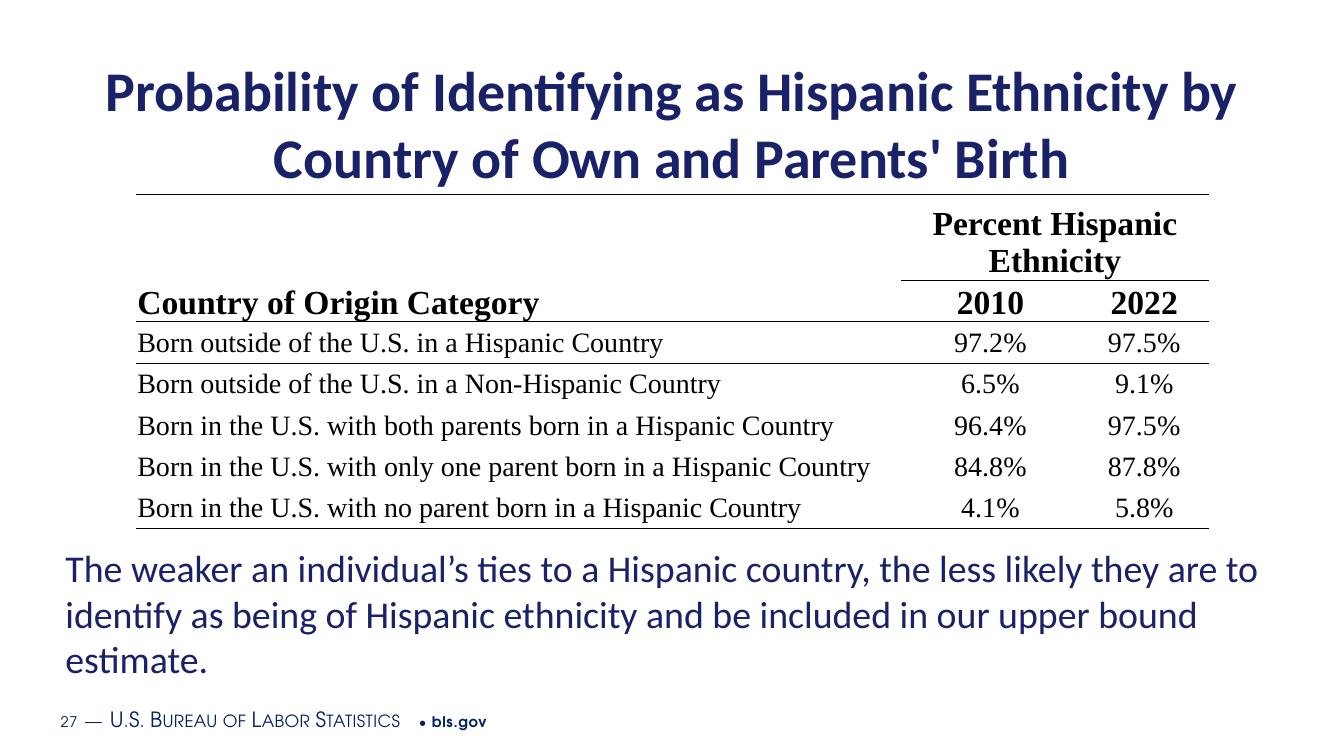
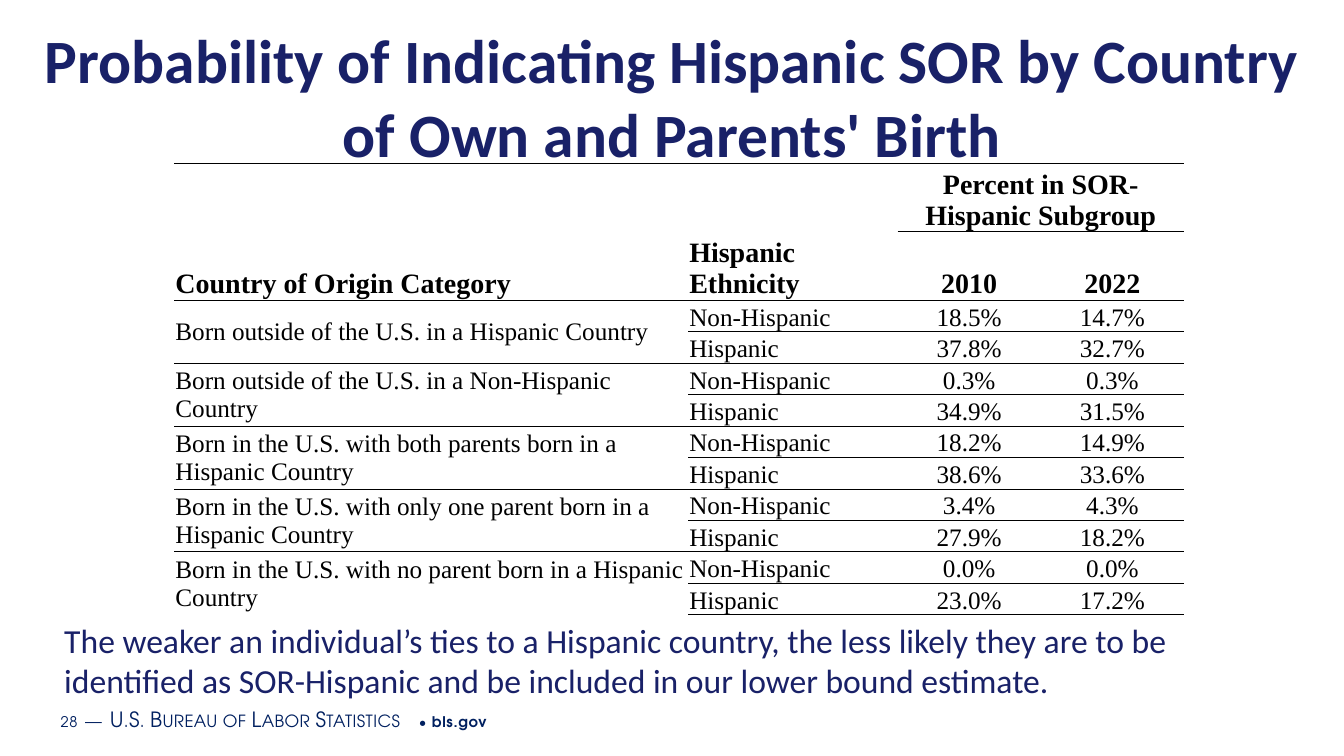
import dataclasses

import pptx
import pptx.dml.color
import pptx.enum.text
import pptx.oxml
import pptx.oxml.ns
import pptx.util

Cm = pptx.util.Cm
Align = pptx.enum.text.PP_ALIGN
Anchor = pptx.enum.text.MSO_ANCHOR


@dataclasses.dataclass(frozen=True)
class Theme:
    heading: str = "192168"
    footer: str = "002060"
    ink: str = "000000"
    paper: str = "FFFFFF"
    text_font: str = "Calibri"
    table_font: str = "Times New Roman"
    footer_font: str = "TeX Gyre Adventor"
    footer_small: float = 10.5
    footer_name: float = 15
    footer_gap: float = 16
    rule_width: float = 0.5
    plain_table: str = "{2D5ABB26-0587-4C30-8999-92F81FD0307C}"


@dataclasses.dataclass(frozen=True)
class TableStyle:
    header_size: float
    body_size: float
    body_anchor: Anchor
    group_rows: int = 1


THEME = Theme()
ORIGINS = [
    "Born outside of the U.S. in a Hispanic Country",
    "Born outside of the U.S. in a Non-Hispanic Country",
    "Born in the U.S. with both parents born in a Hispanic Country",
    "Born in the U.S. with only one parent born in a Hispanic Country",
    "Born in the U.S. with no parent born in a Hispanic Country",
]
ETHNICITY_RATES = [("97.2%", "97.5%"), ("6.5%", "9.1%"), ("96.4%", "97.5%"),
                   ("84.8%", "87.8%"), ("4.1%", "5.8%")]
# Each origin has a non-Hispanic pair and a Hispanic pair
SUBGROUP_RATES = [
    (("18.5%", "14.7%"), ("37.8%", "32.7%")),
    (("0.3%", "0.3%"), ("34.9%", "31.5%")),
    (("18.2%", "14.9%"), ("38.6%", "33.6%")),
    (("3.4%", "4.3%"), ("27.9%", "18.2%")),
    (("0.0%", "0.0%"), ("23.0%", "17.2%")),
]


class SlideWriter:
    def __init__(self, theme):
        self.theme = theme
        self.deck = pptx.Presentation()
        self.deck.slide_width, self.deck.slide_height = Cm(33.87), Cm(19.05)
        self.page = None

    def add_page(self, number):
        self.page = self.deck.slides.add_slide(self.deck.slide_layouts[5])
        fill = self.page.background.fill
        fill.solid()
        fill.fore_color.rgb = pptx.dml.color.RGBColor.from_string(self.theme.paper)
        self.add_footer(number)

    def add_run(self, para, text, font, size, color, bold=False):
        span = para.add_run()
        span.text = text
        span.font.name = font
        span.font.size = pptx.util.Pt(size)
        span.font.bold = bold
        span.font.color.rgb = pptx.dml.color.RGBColor.from_string(color)
        return span

    def add_box(self, left, top, width, height):
        box = self.page.shapes.add_textbox(Cm(left), Cm(top), Cm(width), Cm(height))
        box.text_frame.word_wrap = True
        return box

    def add_footer(self, number):
        theme = self.theme
        frame = self.add_box(1.35, 17.6, 21.51, 1.02).text_frame
        frame.vertical_anchor = Anchor.MIDDLE
        frame.margin_left = frame.margin_right = Cm(0.18)
        frame.margin_top = frame.margin_bottom = Cm(0.1)
        small, name, gap = theme.footer_small, theme.footer_name, theme.footer_gap
        pieces = [(str(number), small, False), (" ", gap, False), ("—", name, False),
                  (" ", gap, False), ("U.S. Bureau of Labor Statistics", name, False),
                  (" • ", small, False), ("bls.gov", small, True)]
        for text, size, bold in pieces:
            span = self.add_run(frame.paragraphs[0], text, theme.footer_font, size,
                                theme.footer, bold)
            properties = span.font._element
            properties.set("spc", "30" if size == name else "50")
            if size == name:
                properties.set("cap", "small")

    def add_title(self, text, size, left, top, width, height):
        box = self.page.shapes.title
        box.left, box.top, box.width, box.height = Cm(left), Cm(top), Cm(width), Cm(height)
        frame = box.text_frame
        frame.word_wrap = True
        frame.auto_size = pptx.enum.text.MSO_AUTO_SIZE.NONE
        frame.vertical_anchor = Anchor.TOP
        para = frame.paragraphs[0]
        para.alignment = Align.CENTER
        self.add_run(para, text, self.theme.text_font, size, self.theme.heading, True)

    def add_takeaway(self, text, size, left, top, width, height):
        frame = self.add_box(left, top, width, height).text_frame
        self.add_run(frame.paragraphs[0], text, self.theme.text_font, size,
                     self.theme.heading)

    def add_border(self, cell, side):
        """Draw a rule on the top ("lnT") or bottom ("lnB") of a cell."""
        properties = cell._tc.get_or_add_tcPr()
        line = pptx.oxml.parse_xml(
            f'<a:{side} {pptx.oxml.ns.nsdecls("a")} w="{pptx.util.Pt(self.theme.rule_width)}">'
            f'<a:solidFill><a:srgbClr val="{self.theme.ink}"/></a:solidFill></a:{side}>')
        has_top = properties.find(pptx.oxml.ns.qn("a:lnT")) is not None
        properties.insert(1 if side == "lnB" and has_top else 0, line)

    def add_rule(self, table, row, first_column=0):
        """Draw a rule along the top edge of a row, or under the last one."""
        for column in range(first_column, len(table.columns)):
            if row < len(table.rows):
                self.add_border(table.cell(row, column), "lnT")
            if row > 0:
                self.add_border(table.cell(row - 1, column), "lnB")

    def fill_cell(self, cell, text, size, bold, centered, anchor):
        cell.fill.background()
        cell.margin_left = cell.margin_right = cell.margin_top = Cm(0.03)
        cell.margin_bottom = Cm(0)
        cell.vertical_anchor = anchor
        if text:
            para = cell.text_frame.paragraphs[0]
            para.alignment = Align.CENTER if centered else Align.LEFT
            self.add_run(para, text, self.theme.table_font, size, self.theme.ink, bold)

    def add_table(self, rows, left, top, widths, heights, style):
        """Add a table with two header rows and two closing year columns."""
        shape = self.page.shapes.add_table(len(rows), len(widths), Cm(left), Cm(top),
                                           Cm(sum(widths)), Cm(sum(heights)))
        table = shape.table
        table.first_row = table.horz_banding = False
        style_id = shape._element.find(".//" + pptx.oxml.ns.qn("a:tableStyleId"))
        style_id.text = self.theme.plain_table
        for column, width in zip(table.columns, widths):
            column.width = Cm(width)
        for row, height in zip(table.rows, heights):
            row.height = Cm(height)

        years = len(widths) - 2
        table.cell(0, years).merge(table.cell(0, years + 1))
        if style.group_rows > 1:
            for row in range(2, len(rows), style.group_rows):
                table.cell(row, 0).merge(table.cell(row + style.group_rows - 1, 0))
        for row, texts in enumerate(rows):
            header = row < 2
            for column, text in enumerate(texts):
                anchor = Anchor.BOTTOM if header else style.body_anchor
                if not header and column == 0:
                    anchor = Anchor.MIDDLE
                self.fill_cell(table.cell(row, column), text,
                               style.header_size if header else style.body_size,
                               header, column >= years, anchor)

        self.add_rule(table, 0)
        self.add_rule(table, 1, years)
        self.add_rule(table, 2)
        if style.group_rows > 1:
            for row in range(2 + style.group_rows, len(rows), style.group_rows):
                self.add_rule(table, row)
        self.add_rule(table, len(rows))


def add_ethnicity_page(writer):
    writer.add_page(27)
    writer.add_title("Probability of Identifying as Hispanic Ethnicity by Country of Own "
                     "and Parents' Birth", 40, 1.37, 1.27, 31.12, 2.24)
    writer.add_takeaway("The weaker an individual’s ties to a Hispanic country, the less "
                        "likely they are to identify as being of Hispanic ethnicity and be "
                        "included in our upper bound estimate.", 27, 1.4, 13.61, 31.12, 4.06)
    rows = [("", "Percent Hispanic Ethnicity", ""),
            ("Country of Origin Category", "2010", "2022")]
    rows += [(origin, *rates) for origin, rates in zip(ORIGINS, ETHNICITY_RATES)]
    writer.add_table(rows, 3.43, 4.9, [19.28, 4.5, 3.25], [2.16] + [1.04] * 6,
                     TableStyle(24, 20, Anchor.MIDDLE))


def add_subgroup_page(writer):
    writer.add_page(28)
    writer.add_title("Probability of Indicating Hispanic SOR by Country of Own and "
                     "Parents' Birth", 44, 0.84, 0.43, 32.21, 3.94)
    writer.add_takeaway("The weaker an individual’s ties to a Hispanic country, the less "
                        "likely they are to be identified as SOR-Hispanic and be included "
                        "in our lower bound estimate.", 24, 1.37, 15.49, 31.12, 2.49)
    rows = [("", "", "Percent in SOR-Hispanic Subgroup", ""),
            ("Country of Origin Category", "Hispanic Ethnicity", "2010", "2022")]
    for origin, (non_hispanic, hispanic) in zip(ORIGINS, SUBGROUP_RATES):
        rows += [(origin, "Non-Hispanic", *non_hispanic), ("", "Hispanic", *hispanic)]
    writer.add_table(rows, 4.39, 4.11, [12.95, 5.28, 3.61, 3.61],
                     [1.65, 1.57] + [0.79] * 10,
                     TableStyle(20, 18, Anchor.BOTTOM, group_rows=2))


def main():
    writer = SlideWriter(THEME)
    add_ethnicity_page(writer)
    add_subgroup_page(writer)
    writer.deck.save("out.pptx")


if __name__ == "__main__":
    main()
